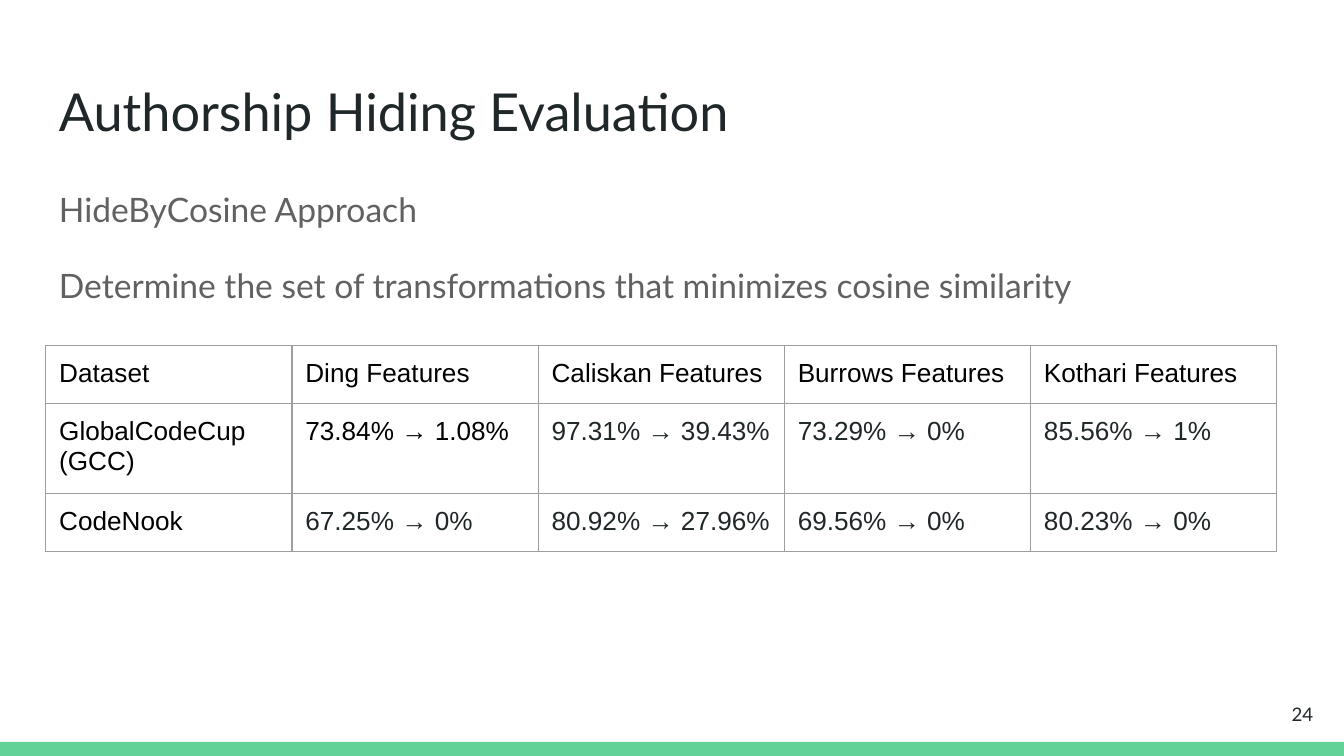
from lxml import etree
from pptx import Presentation
from pptx.dml.color import RGBColor
from pptx.enum import shapes, text
from pptx.oxml.ns import qn
from pptx.util import Inches, Pt

INK, GREY, BLACK = "202729", "616161", "000000"
GREEN, WHITE, BORDER = "63D297", "FFFFFF", "9E9E9E"
INSET = Inches(0.1)

RESULTS = [
    ["Dataset", "Ding Features", "Caliskan Features", "Burrows Features", "Kothari Features"],
    ["GlobalCodeCup (GCC)", "73.84% → 1.08%", "97.31% → 39.43%", "73.29% → 0%", "85.56% → 1%"],
    ["CodeNook", "67.25% → 0%", "80.92% → 27.96%", "69.56% → 0%", "80.23% → 0%"],
]


def color(hex_value):
    return RGBColor.from_string(hex_value)


def style(paragraph, size, hex_value, font="Lato", line_spacing=1.0):
    paragraph.font.name = font
    paragraph.font.size = Pt(size)
    paragraph.font.color.rgb = color(hex_value)
    paragraph.line_spacing = line_spacing
    paragraph.space_before = paragraph.space_after = Pt(0)


def set_insets(holder):
    """Give a text frame or table cell equal margins."""
    holder.margin_left = holder.margin_right = INSET
    holder.margin_top = holder.margin_bottom = INSET


def add_text(slide, box, lines, size, hex_value, line_spacing=1.0):
    frame = slide.shapes.add_textbox(*map(Inches, box)).text_frame
    frame.word_wrap = True
    set_insets(frame)
    frame.text = "\n".join(lines)
    for paragraph in frame.paragraphs:
        style(paragraph, size, hex_value, line_spacing=line_spacing)
    return frame


def add_bottom_bar(slide):
    bar = slide.shapes.add_shape(
        shapes.MSO_SHAPE.RECTANGLE, Inches(0), Inches(5.52), Inches(10), Inches(0.11))
    bar.shadow.inherit = False
    bar.fill.solid()
    bar.fill.fore_color.rgb = color(GREEN)
    bar.line.fill.background()


def add_borders(cell):
    properties = cell._tc.get_or_add_tcPr()
    for position, side in enumerate(("a:lnL", "a:lnR", "a:lnT", "a:lnB")):
        line = etree.Element(qn(side), w=str(Pt(0.75)))
        fill = etree.SubElement(line, qn("a:solidFill"))
        etree.SubElement(fill, qn("a:srgbClr"), val=BORDER)
        properties.insert(position, line)


def add_results_table(slide):
    row_height = Inches(0.42)
    table = slide.shapes.add_table(
        len(RESULTS), len(RESULTS[0]), Inches(0.34), Inches(2.57),
        Inches(9.16), row_height * len(RESULTS)).table
    table.first_row = table.horz_banding = False
    for r, values in enumerate(RESULTS):
        table.rows[r].height = row_height
        for c, value in enumerate(values):
            cell = table.cell(r, c)
            cell.text = value
            set_insets(cell)
            cell.fill.background()
            add_borders(cell)
            is_black = r == 0 or c == 0 or (r, c) == (1, 1)
            style(cell.text_frame.paragraphs[0], 14, BLACK if is_black else INK, "Arial")


def main():
    deck = Presentation()
    deck.slide_width = Inches(10)
    deck.slide_height = deck.slide_width * 9 // 16
    slide = deck.slides.add_slide(deck.slide_layouts[6])
    slide.background.fill.solid()
    slide.background.fill.fore_color.rgb = color(WHITE)

    add_bottom_bar(slide)
    add_text(slide, (0.34, 0.49, 9.32, 0.63), ["Authorship Hiding Evaluation"], 28, INK)
    body = add_text(slide, (0.34, 1.26, 9.32, 3.74), [
        "HideByCosine Approach",
        "Determine the set of transformations that minimizes cosine similarity",
    ], 18, GREY, line_spacing=1.15)
    body.paragraphs[1].space_before = Pt(16)

    add_results_table(slide)

    page_number = add_text(slide, (9.27, 5.1, 0.6, 0.43), ["24"], 10, INK)
    page_number.vertical_anchor = text.MSO_ANCHOR.MIDDLE
    page_number.paragraphs[0].alignment = text.PP_ALIGN.RIGHT

    deck.save("out.pptx")


if __name__ == "__main__":
    main()
